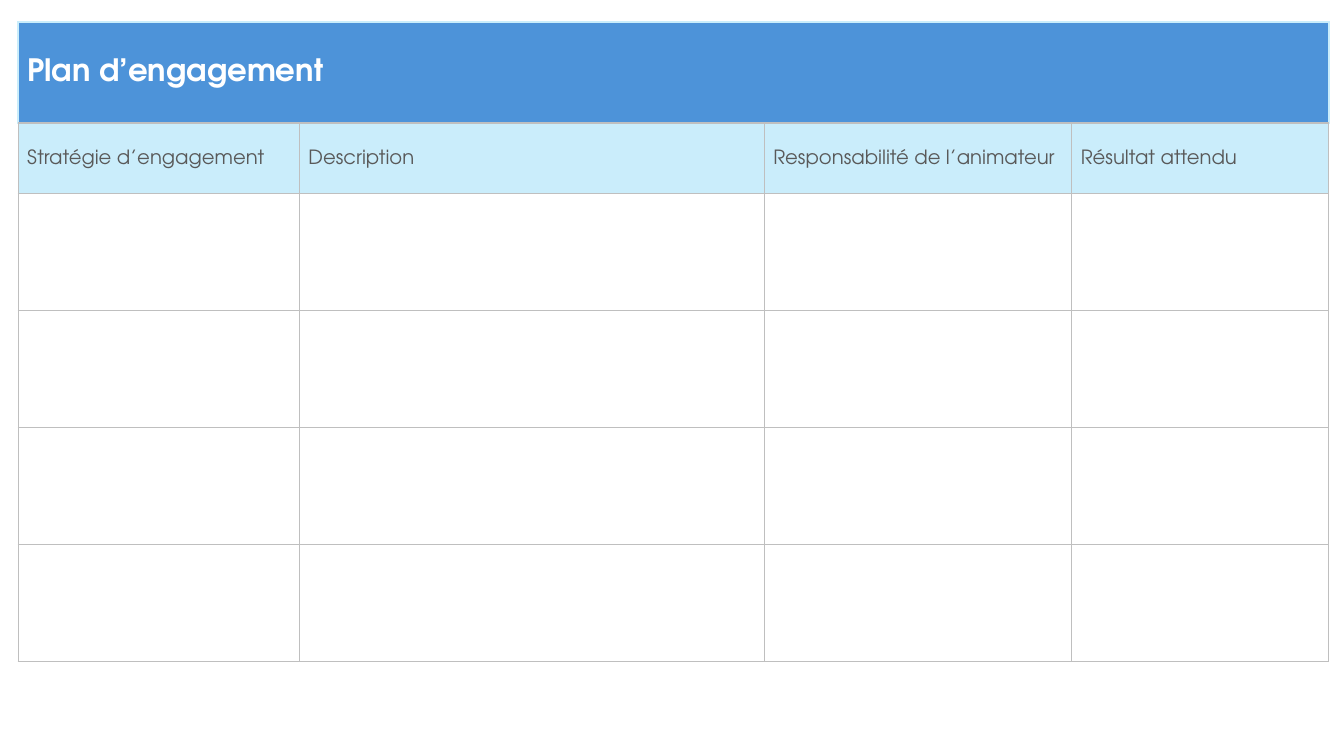
from dataclasses import dataclass

from lxml.etree import SubElement
from pptx import Presentation
from pptx.dml.color import RGBColor
from pptx.enum.text import MSO_VERTICAL_ANCHOR as Anchor
from pptx.oxml.ns import qn
from pptx.util import Pt

EMU_PER_PX = 9144  # 100 px to the inch


@dataclass(frozen=True)
class Theme:
    font: str = "TeX Gyre Adventor"
    title_size: int = 22
    header_size: int = 14
    title_fill: str = "4D93D9"
    header_fill: str = "CAEDFB"
    title_text: str = "FFFFFF"
    header_text: str = "595959"
    grid: str = "BFBFBF"


THEME = Theme()
TITLE = "Plan d’engagement"
HEADERS = [
    "Stratégie d’engagement",
    "Description",
    "Responsabilité de l’animateur",
    "Résultat attendu",
]
COLUMN_WIDTHS = [279, 461, 305, 255]
ROW_HEIGHTS = [100, 70] + [116] * 4
GRID_BORDERS = dict.fromkeys("LRTB", (THEME.grid, 1))
TITLE_BORDERS = dict.fromkeys("LRT", (THEME.header_fill, 1.5)) | {"B": (THEME.grid, 1)}


def px(length):
    return length * EMU_PER_PX


def set_borders(cell, borders):
    """Add the side lines; call before filling, as the schema wants lines first."""
    properties = cell._tc.get_or_add_tcPr()
    for side in "LRTB":
        color, width = borders[side]
        line = SubElement(properties, qn(f"a:ln{side}"), w=str(Pt(width)))
        fill = SubElement(line, qn("a:solidFill"))
        SubElement(fill, qn("a:srgbClr"), val=color)


def write_cell(cell, text, *, size, color, fill, bold=False):
    cell.fill.solid()
    cell.fill.fore_color.rgb = RGBColor.from_string(fill)
    cell.vertical_anchor = Anchor.MIDDLE
    cell.margin_left, cell.margin_right = px(9), px(1)
    cell.margin_top, cell.margin_bottom = px(1), 0
    span = cell.text_frame.paragraphs[0].add_run()
    span.text = text
    span.font.name = THEME.font
    span.font.size = Pt(size)
    span.font.bold = bold
    span.font.color.rgb = RGBColor.from_string(color)


def add_grid(page, left, top):
    """Add the bordered table, its cells still empty and unfilled."""
    frame = page.shapes.add_table(
        len(ROW_HEIGHTS), len(COLUMN_WIDTHS), px(left), px(top),
        px(sum(COLUMN_WIDTHS)), px(sum(ROW_HEIGHTS)),
    )
    table = frame.table
    table.first_row = table.horz_banding = False
    for column, width in zip(table.columns, COLUMN_WIDTHS):
        column.width = px(width)
    for index, (row, height) in enumerate(zip(table.rows, ROW_HEIGHTS)):
        row.height = px(height)
        for cell in row.cells:
            set_borders(cell, GRID_BORDERS if index else TITLE_BORDERS)
            cell.fill.background()
    return table


def main():
    deck = Presentation()
    deck.slide_width, deck.slide_height = px(1333), px(750)
    page = deck.slides.add_slide(deck.slide_layouts[6])

    plan = add_grid(page, 18, 22)
    title_cell = plan.cell(0, 0)
    title_cell.merge(plan.cell(0, len(HEADERS) - 1))
    write_cell(title_cell, TITLE, size=THEME.title_size, color=THEME.title_text,
               fill=THEME.title_fill, bold=True)
    for column, header in enumerate(HEADERS):
        write_cell(plan.cell(1, column), header, size=THEME.header_size,
                   color=THEME.header_text, fill=THEME.header_fill)

    deck.save("out.pptx")


if __name__ == "__main__":
    main()
